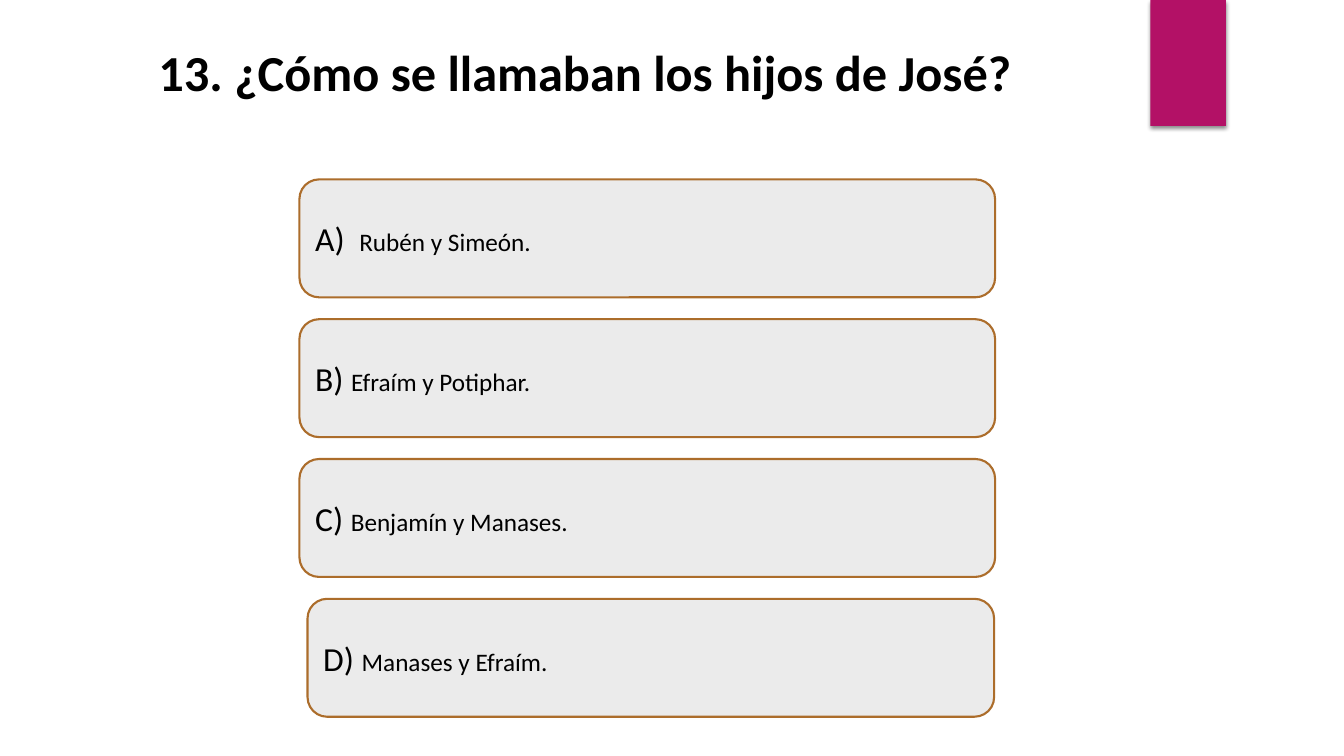
from lxml.etree import SubElement
from pptx import Presentation
from pptx.dml.color import RGBColor
from pptx.enum.shapes import MSO_SHAPE
from pptx.enum.text import MSO_ANCHOR, MSO_AUTO_SIZE, PP_ALIGN
from pptx.oxml.ns import qn
from pptx.util import Inches, Pt

COLORS = {
    "background": "FFFFFF",
    "tab": "B31166",
    "answer": "EBEBEB",
    "border": "AC6D2B",
    "text": "000000",
    "shadow": "000000",
}


def add_text(paragraph, text, size=18, font="Calibri", bold=False):
    run = paragraph.add_run()
    run.text = text
    run.font.size = Pt(size)
    run.font.name = font
    run.font.bold = bold
    run.font.color.rgb = RGBColor.from_string(COLORS["text"])


def add_box(slide, preset, left, top, width, height, fill):
    shape = slide.shapes.add_shape(
        preset, Inches(left), Inches(top), Inches(width), Inches(height))
    shape.shadow.inherit = False
    shape.fill.solid()
    shape.fill.fore_color.rgb = RGBColor.from_string(COLORS[fill])
    return shape


presentation = Presentation()
presentation.slide_width = Inches(13.33)
presentation.slide_height = Inches(7.5)
slide = presentation.slides.add_slide(presentation.slide_layouts[5])
slide.background.fill.solid()
slide.background.fill.fore_color.rgb = RGBColor.from_string(COLORS["background"])

# Corner tab with a soft shadow below
tab = add_box(slide, MSO_SHAPE.RECTANGLE, 11.41, 0, 0.75, 1.25, "tab")
tab.line.fill.background()
effects = tab._element.spPr.find(qn("a:effectLst"))
shadow = SubElement(effects, qn("a:outerShdw"), blurRad=str(Pt(3)),
                    dist=str(Pt(2)), dir="5400000", rotWithShape="0")
shadow_color = SubElement(shadow, qn("a:srgbClr"), val=COLORS["shadow"])
SubElement(shadow_color, qn("a:alpha"), val="45000")

# Question
title = slide.shapes.title
title.left, title.top = Inches(0.54), Inches(0.36)
title.width, title.height = Inches(10.53), Inches(0.71)
title.text_frame.word_wrap = True
title.text_frame.auto_size = MSO_AUTO_SIZE.SHAPE_TO_FIT_TEXT
title.text_frame.vertical_anchor = MSO_ANCHOR.TOP
question = title.text_frame.paragraphs[0]
question.alignment = PP_ALIGN.CENTER
add_text(question, "13. ¿Cómo se llamaban los hijos de José?", size=36, bold=True)

# Answers: letter, gap after it, wording, left edge, width
answers = [
    ("A) ", " ", "Rubén y Simeón.", 2.97, 6.9),
    ("B) ", "", "Efraím y Potiphar.", 2.97, 6.9),
    ("C) ", "", "Benjamín y Manases.", 2.97, 6.9),
    ("D) ", "", "Manases y Efraím.", 3.05, 6.81),
]
for row, (letter, gap, wording, left, width) in enumerate(answers):
    answer = add_box(slide, MSO_SHAPE.ROUNDED_RECTANGLE,
                     left, 1.78 + row * 1.387, width, 1.17, "answer")
    answer.line.color.rgb = RGBColor.from_string(COLORS["border"])
    answer.line.width = Pt(1.5)
    answer.text_frame.word_wrap = True
    answer.text_frame.vertical_anchor = MSO_ANCHOR.MIDDLE
    paragraph = answer.text_frame.paragraphs[0]
    paragraph.alignment = PP_ALIGN.LEFT
    add_text(paragraph, letter, size=24)
    if gap:
        add_text(paragraph, gap, font="TeX Gyre Adventor")
    add_text(paragraph, wording)

presentation.save("out.pptx")
